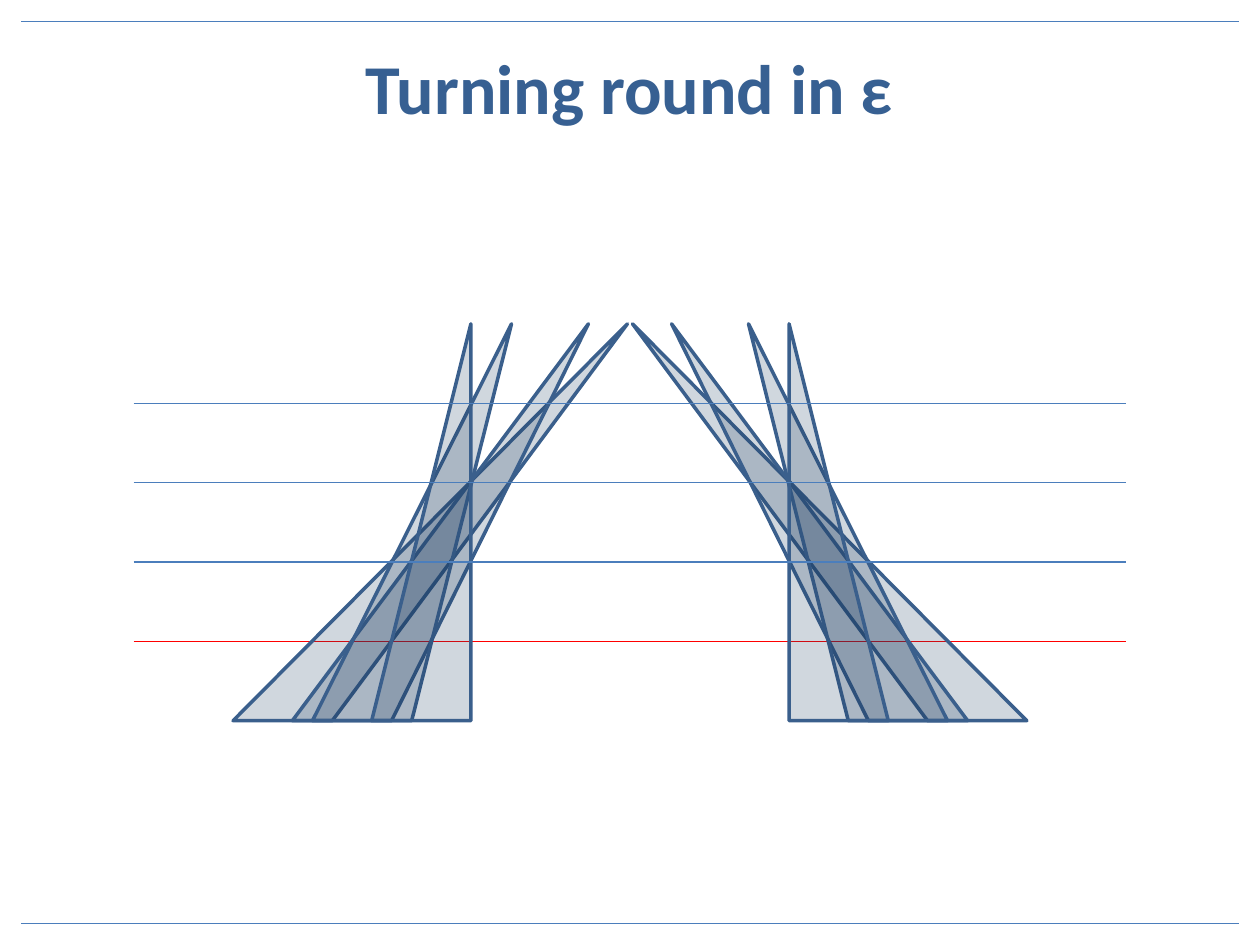
import pptx
import pptx.dml.color
import pptx.enum.shapes
import pptx.enum.text
import pptx.oxml.ns
import pptx.util

Pt = pptx.util.Pt
RGBColor = pptx.dml.color.RGBColor
qn = pptx.oxml.ns.qn

TITLE_BLUE = RGBColor(0x37, 0x60, 0x92)
RULE_BLUE = RGBColor(0x4B, 0x7E, 0xBC)
EDGE_BLUE = RGBColor(0x3A, 0x5F, 0x8C)
NEEDLE_NAVY = RGBColor(0x17, 0x37, 0x5E)
LEVEL_RED = RGBColor(0xFF, 0x00, 0x00)

WIDTH, HEIGHT = 720, 540
FRAME_MARGIN, LEVEL_MARGIN = 12.24, 76.32
TIP_Y, FOOT_Y = 185.04, 411.84
LEVEL_GAP = (FOOT_Y - TIP_Y) / 5
NEEDLE_BASE = (FOOT_Y - TIP_Y) / 4
LEANING_NEEDLES = [(133.2, 358.56), (167.04, 336.24), (178.56, 292.32)]  # foot x, tip x
UPRIGHT_FOOT = 212.4


class TurningSlide:
    """Holds the style and the slide being drawn; all lengths are in points."""

    font = "Calibri"
    rule_width = 0.75
    edge_width = 2
    needle_opacity = 20

    def __init__(self, deck):
        self.slide = deck.slides.add_slide(deck.slide_layouts[5])

    def title(self, wording, left, top, width, height):
        title = self.slide.shapes.title
        title.left, title.top = Pt(left), Pt(top)
        title.width, title.height = Pt(width), Pt(height)
        frame = title.text_frame
        frame.word_wrap = True
        frame.vertical_anchor = pptx.enum.text.MSO_ANCHOR.MIDDLE
        paragraph = frame.paragraphs[0]
        paragraph.alignment = pptx.enum.text.PP_ALIGN.CENTER
        run = paragraph.add_run()
        run.text = wording
        run.font.name = self.font
        run.font.size = Pt(40)
        run.font.bold = True
        run.font.color.rgb = TITLE_BLUE

    def rule(self, margin, y, color=RULE_BLUE):
        """Draw a horizontal line that keeps the same margin on both sides."""
        rule = self.slide.shapes.add_connector(
            pptx.enum.shapes.MSO_CONNECTOR.STRAIGHT,
            Pt(margin), Pt(y), Pt(WIDTH - margin), Pt(y))
        rule.line.color.rgb = color
        rule.line.width = Pt(self.rule_width)
        properties = rule._element.spPr
        properties.append(properties.makeelement(qn("a:effectLst"), {}))

    def style_needle(self, needle):
        needle.shadow.inherit = False
        needle.fill.solid()
        needle.fill.fore_color.rgb = NEEDLE_NAVY
        color = needle._element.spPr.find(".//" + qn("a:srgbClr"))
        color.append(color.makeelement(
            qn("a:alpha"), {"val": str(self.needle_opacity * 1000)}))
        needle.line.color.rgb = EDGE_BLUE
        needle.line.width = Pt(self.edge_width)

    def leaning_needle(self, fan, corners):
        start, *others = [(Pt(x), Pt(y)) for x, y in corners]
        builder = fan.shapes.build_freeform(*start, scale=1.0)
        builder.add_line_segments(others, close=True)
        self.style_needle(builder.convert_to_shape())

    def upright_needle(self, fan, left, apex):
        needle = fan.shapes.add_shape(
            pptx.enum.shapes.MSO_SHAPE.ISOSCELES_TRIANGLE,
            Pt(left), Pt(TIP_Y), Pt(NEEDLE_BASE), Pt(FOOT_Y - TIP_Y))
        needle.adjustments[0] = apex
        self.style_needle(needle)

    def fan(self, mirrored):
        """Draw one group of turned needles, mirrored about the slide centre if asked."""
        def place(x):
            return WIDTH - x if mirrored else x

        fan = self.slide.shapes.add_group_shape()
        for foot, tip in LEANING_NEEDLES:
            self.leaning_needle(fan, [(place(foot), FOOT_Y), (place(tip), TIP_Y),
                                      (place(foot + NEEDLE_BASE), FOOT_Y)])
        left = min(place(UPRIGHT_FOOT), place(UPRIGHT_FOOT + NEEDLE_BASE))
        self.upright_needle(fan, left, apex=0 if mirrored else 1)


def main():
    deck = pptx.Presentation()
    deck.slide_width, deck.slide_height = Pt(WIDTH), Pt(HEIGHT)
    page = TurningSlide(deck)
    for y in (FRAME_MARGIN, HEIGHT - FRAME_MARGIN):
        page.rule(FRAME_MARGIN, y)
    page.rule(LEVEL_MARGIN, TIP_Y + 4 * LEVEL_GAP, LEVEL_RED)
    page.title("Turning round in ε", 30.96, 18, 657.36, 62.64)
    for mirrored in (False, True):
        page.fan(mirrored)
    for level in (3, 2, 1):
        page.rule(LEVEL_MARGIN, TIP_Y + level * LEVEL_GAP)
    deck.save("out.pptx")


if __name__ == "__main__":
    main()
